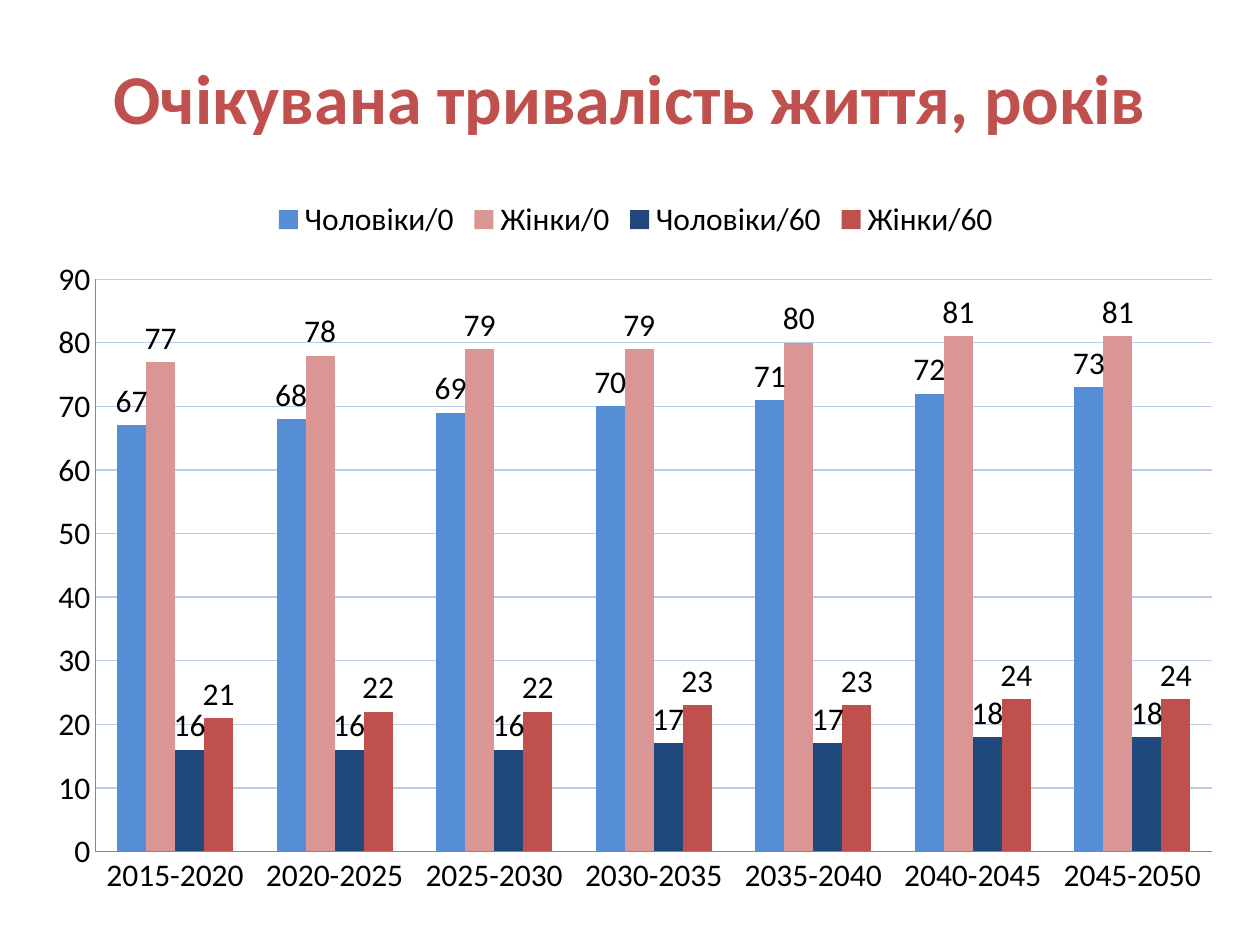
import pptx
import pptx.util
import pptx.chart.data
import pptx.dml.color
import pptx.enum.chart
import pptx.enum.text
import pptx.oxml.ns
from dataclasses import dataclass
from lxml import etree

Pt = pptx.util.Pt


@dataclass(frozen=True)
class Theme:
    font: str = "Calibri"
    title_size: int = 40
    chart_size: int = 18
    title: str = "C0504D"
    text: str = "000000"
    grid: str = "B9CDE5"
    axis: str = "878787"


THEME = Theme()
PERIODS = [f"{year}-{year + 5}" for year in range(2015, 2050, 5)]
# Name, colour, values
SERIES = [
    ("Чоловіки/0", "558ED5", (67, 68, 69, 70, 71, 72, 73)),
    ("Жінки/0", "D99694", (77, 78, 79, 79, 80, 81, 81)),
    ("Чоловіки/60", "1F497D", (16, 16, 16, 17, 17, 18, 18)),
    ("Жінки/60", "C0504D", (21, 22, 22, 23, 23, 24, 24)),
]


def rgb(value):
    return pptx.dml.color.RGBColor.from_string(value)


def set_attrs(obj, **values):
    for name, value in values.items():
        setattr(obj, name, value)


def set_font(font, size, color, bold=False):
    set_attrs(font, name=THEME.font, size=Pt(size), bold=bold)
    font.color.rgb = rgb(color)


def set_line(line, color):
    line.color.rgb = rgb(color)
    line.width = Pt(0.75)


def set_layout(parent, index, **fractions):
    """Place a chart part by fractions of the chart's size."""
    qn = pptx.oxml.ns.qn
    for old in parent.findall(qn("c:layout")):
        parent.remove(old)
    layout = etree.Element(qn("c:layout"))
    manual = etree.SubElement(layout, qn("c:manualLayout"))
    values = dict(layoutTarget="inner", xMode="edge", yMode="edge", **fractions)
    for name, value in values.items():
        etree.SubElement(manual, qn(f"c:{name}")).set("val", str(value))
    parent.insert(index, layout)


def add_title(s, text):
    sp = s.shapes.title
    set_attrs(sp, left=Pt(36), top=Pt(21.6), width=Pt(648), height=Pt(78.5))
    tf = sp.text_frame
    set_attrs(tf, word_wrap=True, vertical_anchor=pptx.enum.text.MSO_ANCHOR.MIDDLE)
    p = tf.paragraphs[0]
    set_attrs(p, alignment=pptx.enum.text.PP_ALIGN.CENTER, line_spacing=0.7)
    r = p.add_run()
    r.text = text
    set_font(r.font, THEME.title_size, THEME.title, bold=True)


def format_axes(chart):
    for axis in (chart.category_axis, chart.value_axis):
        set_attrs(axis, major_tick_mark=pptx.enum.chart.XL_TICK_MARK.NONE,
                  minor_tick_mark=pptx.enum.chart.XL_TICK_MARK.NONE)
        set_line(axis.format.line, THEME.axis)
    axis = chart.value_axis
    set_attrs(axis, minimum_scale=0, maximum_scale=90, major_unit=10,
              has_major_gridlines=True)
    set_attrs(axis.tick_labels, number_format="#,##0", number_format_is_linked=False)
    set_line(axis.major_gridlines.format.line, THEME.grid)


def format_series(series, color):
    set_attrs(series, smooth=False) if hasattr(series, "smooth") else None
    series.format.fill.solid()
    series.format.fill.fore_color.rgb = rgb(color)
    labels = series.data_labels
    set_attrs(labels, show_value=True, number_format="##0;\\-##0;0",
              number_format_is_linked=False,
              position=pptx.enum.chart.XL_LABEL_POSITION.OUTSIDE_END)
    set_font(labels.font, THEME.chart_size, THEME.text)


def add_column_chart(s):
    data = pptx.chart.data.CategoryChartData()
    data.categories = PERIODS
    for name, _, values in SERIES:
        data.add_series(name, values)
    chart = s.shapes.add_chart(
        pptx.enum.chart.XL_CHART_TYPE.COLUMN_CLUSTERED,
        Pt(20.2), Pt(105.8), Pt(686.2), Pt(414), data).chart
    set_font(chart.font, THEME.chart_size, THEME.text)
    set_attrs(chart, has_title=False, has_legend=True)
    set_attrs(chart.legend, position=pptx.enum.chart.XL_LEGEND_POSITION.TOP,
              include_in_layout=False)
    plot = chart.plots[0]
    set_attrs(plot, gap_width=150, overlap=0, vary_by_categories=False)
    for series, (_, color, _) in zip(plot.series, SERIES):
        format_series(series, color)
    format_axes(chart)
    plot_area = chart.element.chart.plotArea
    set_layout(plot_area, 0, x=0.05, y=0.13, w=0.93, h=0.79)


def main():
    prs = pptx.Presentation()
    set_attrs(prs, slide_width=Pt(720), slide_height=Pt(540))
    s = prs.slides.add_slide(prs.slide_layouts[5])

    # Heading
    add_title(s, "Очікувана тривалість життя, років")

    # Life expectancy by sex and age
    add_column_chart(s)

    prs.save("out.pptx")


if __name__ == "__main__":
    main()
